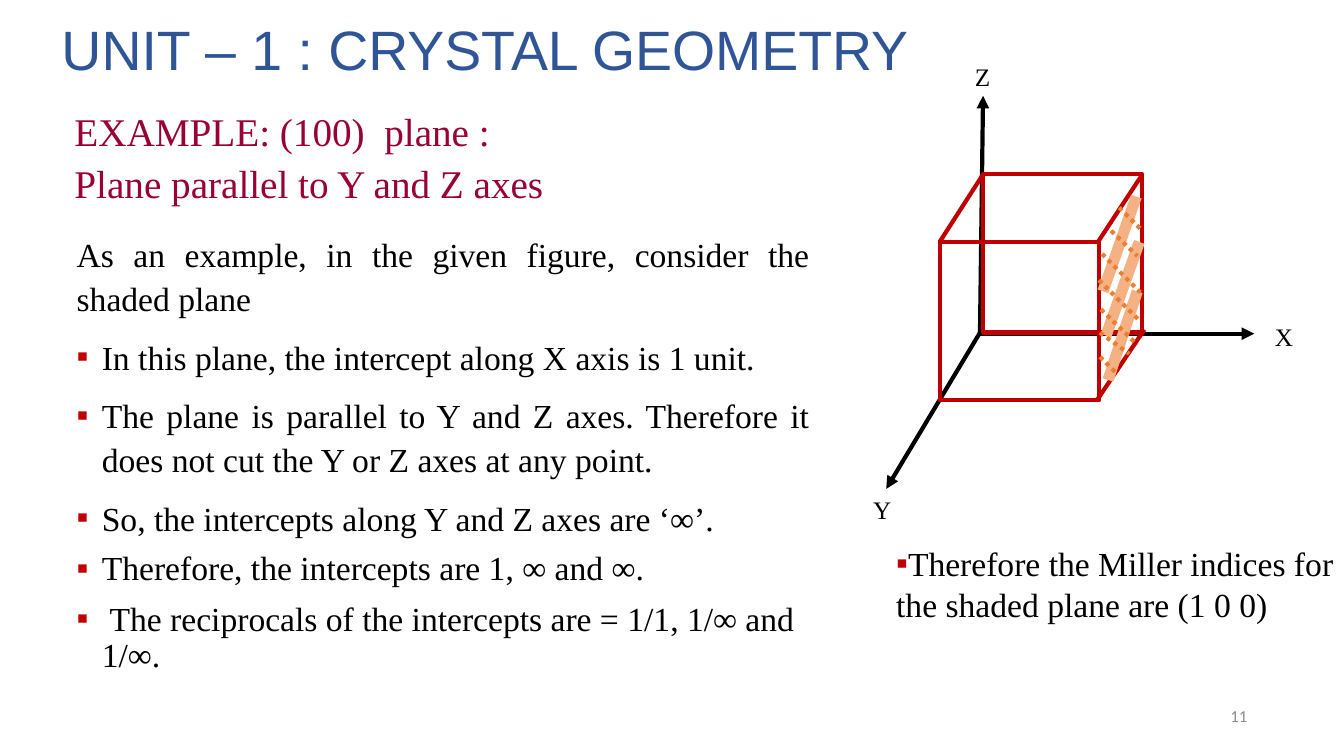
from dataclasses import dataclass

from lxml import etree
from pptx import Presentation
from pptx import util as u
from pptx.dml.color import RGBColor
from pptx.enum import dml, shapes, text
from pptx.oxml import ns


@dataclass(frozen=True)
class Theme:
    title: str = "2F5597"
    heading: str = "990033"
    ink: str = "000000"
    cube: str = "C00000"
    band: str = "F4B183"
    dots: str = "ED7D31"
    muted: str = "8C8C8C"
    title_font: str = "Arial"
    body_font: str = "Times New Roman"
    number_font: str = "Calibri"
    title_size: float = 39.6
    heading_size: float = 28
    body_size: float = 24
    label_size: float = 18
    number_size: float = 12
    line_width: float = 3
    band_width: float = 8


THEME = Theme()
ALIGN = text.PP_ALIGN

INTRO = "As an example, in the given figure, consider the shaded plane"
JUSTIFIED_POINTS = [
    "In this plane, the intercept along X axis is 1 unit. ",
    "The plane is parallel to Y and Z axes. Therefore it does not cut the Y or Z axes at any point.",
    "So, the intercepts along Y and Z axes are ‘∞’.",
]
LEFT_POINTS = [
    "Therefore, the intercepts are 1, ∞ and ∞.",
    " The reciprocals of the intercepts are = 1/1, 1/∞ and 1/∞.",
]

AXES = [((1.14, 2.75), (3.88, 2.75)), ((1.16, 2.74), (1.19, 0.39)), ((1.16, 2.74), (0.23, 4.29))]
FACES = [(0.76, 1.84), (1.19, 1.17)]
EDGES = [((2.32, 3.41), (2.79, 2.71)), ((0.76, 1.84), (1.19, 1.17)), ((2.33, 1.84), (2.77, 1.17))]
BANDS = [((2.71, 1.39), (2.38, 2.33)), ((2.74, 1.84), (2.41, 2.77)), ((2.72, 2.33), (2.43, 3.21))]
DOTS = [
    ((2.54, 1.5), (2.77, 1.73)), ((2.46, 1.73), (2.72, 1.98)), ((2.37, 1.96), (2.75, 2.34)),
    ((2.34, 2.22), (2.74, 2.62)), ((2.36, 2.51), (2.72, 2.86)), ((2.35, 2.74), (2.64, 2.95)),
    ((2.35, 2.98), (2.5, 3.13)),
]
LABELS = [("Z", 0.92, 0, 0.53), ("X", 3.91, 2.58, 0.53), ("Y", 0, 4.29, 0.38)]


def place(sp, box):
    sp.left, sp.top, sp.width, sp.height = map(u.Inches, box)


def add_text_box(s, box):
    tf = s.shapes.add_textbox(*map(u.Inches, box)).text_frame
    tf.word_wrap = True
    return tf


def style(p, size, color, font=THEME.body_font, align=ALIGN.LEFT, spacing=1.0, before=0):
    p.alignment = align
    p.line_spacing = spacing
    p.space_before = u.Pt(before)
    for r in p.runs:
        r.font.size = u.Pt(size)
        r.font.name = font
        r.font.color.rgb = RGBColor.from_string(color)


def set_bullet(p, char, indent=0):
    pPr = p._p.get_or_add_pPr()
    pPr.set("marL", str(u.Inches(indent)))
    pPr.set("indent", str(-u.Inches(indent)))
    if not char:
        etree.SubElement(pPr, ns.qn("a:buNone"))
        return
    color = etree.SubElement(pPr, ns.qn("a:buClr"))
    etree.SubElement(color, ns.qn("a:srgbClr"), val=THEME.cube)
    etree.SubElement(pPr, ns.qn("a:buFont"), typeface=THEME.body_font)
    etree.SubElement(pPr, ns.qn("a:buChar"), char=char)


def add_line(s, box, ends, color, width=THEME.line_width, dash=None, arrow=False):
    left, top = box[:2]
    (x1, y1), (x2, y2) = ends
    points = (left + x1, top + y1, left + x2, top + y2)
    line = s.shapes.add_connector(shapes.MSO_CONNECTOR.STRAIGHT, *map(u.Inches, points))
    line.line.color.rgb = RGBColor.from_string(color)
    line.line.width = u.Pt(width)
    if dash is not None:
        line.line.dash_style = dash
    if arrow:
        etree.SubElement(line.line._get_or_add_ln(), ns.qn("a:tailEnd"), type="triangle")
    etree.SubElement(line._element.spPr, ns.qn("a:effectLst"))


def add_title(s, box):
    sp = s.shapes.title
    place(sp, box)
    tf = sp.text_frame
    tf.text = "UNIT – 1 : CRYSTAL GEOMETRY"
    tf.auto_size = text.MSO_AUTO_SIZE.NONE
    tf.vertical_anchor = text.MSO_ANCHOR.MIDDLE
    style(tf.paragraphs[0], THEME.title_size, THEME.title, THEME.title_font, spacing=0.9)


def add_heading(s, box):
    tf = add_text_box(s, box)
    tf.text = "EXAMPLE: (100)  plane : \nPlane parallel to Y and Z axes"
    for p in tf.paragraphs:
        style(p, THEME.heading_size, THEME.heading, align=ALIGN.JUSTIFY, spacing=1.1)


def add_explanation(s, box):
    sp = s.placeholders[1]
    place(sp, box)
    tf = sp.text_frame
    tf.text = "\n".join([INTRO, *JUSTIFIED_POINTS, *LEFT_POINTS])
    tf.auto_size = text.MSO_AUTO_SIZE.NONE
    for i, p in enumerate(tf.paragraphs):
        justified = i <= len(JUSTIFIED_POINTS)
        style(p, THEME.body_size, THEME.ink, align=ALIGN.JUSTIFY if justified else ALIGN.LEFT,
              spacing=1.1 if justified else 0.9, before=10)
        set_bullet(p, "▪" if i else None, 0.25 if i else 0)


def add_crystal(s, box):
    left, top = box[:2]
    for ends in AXES:
        add_line(s, box, ends, THEME.ink, arrow=True)
    for x, y in FACES:
        face = s.shapes.add_shape(shapes.MSO_SHAPE.RECTANGLE,
                                  *map(u.Inches, (left + x, top + y, 1.58, 1.57)))
        face.shadow.inherit = False
        face.fill.background()
        face.line.color.rgb = RGBColor.from_string(THEME.cube)
        face.line.width = u.Pt(THEME.line_width)
    for ends in EDGES:
        add_line(s, box, ends, THEME.cube)
    for ends in BANDS:
        add_line(s, box, ends, THEME.band, THEME.band_width)
    for ends in DOTS:
        add_line(s, box, ends, THEME.dots, dash=dml.MSO_LINE.ROUND_DOT)
    for name, x, y, width in LABELS:
        tf = add_text_box(s, (left + x, top + y, width, 0.4))
        tf.text = name
        style(tf.paragraphs[0], THEME.label_size, THEME.ink, align=ALIGN.CENTER)


def add_conclusion(s, box):
    tf = add_text_box(s, box)
    tf.text = "Therefore the Miller indices for the shaded plane are (1 0 0)"
    p = tf.paragraphs[0]
    style(p, THEME.body_size, THEME.ink)
    set_bullet(p, "▪")


def add_slide_number(s, box):
    tf = add_text_box(s, box)
    tf.text = "11"
    tf.vertical_anchor = text.MSO_ANCHOR.MIDDLE
    style(tf.paragraphs[0], THEME.number_size, THEME.muted, THEME.number_font, ALIGN.RIGHT)


def main():
    prs = Presentation()
    prs.slide_width, prs.slide_height = u.Inches(13.33), u.Inches(7.5)
    s = prs.slides.add_slide(prs.slide_layouts[1])
    add_explanation(s, (0.66, 2.23, 7.47, 4.51))
    add_title(s, (0.51, 0.18, 11.5, 0.68))
    add_heading(s, (0.64, 0.97, 5.16, 1.14))
    add_slide_number(s, (9.47, 6.9, 3, 0.4))
    add_crystal(s, (8.56, 0.56, 4.44, 4.69))
    add_conclusion(s, (8.79, 5.34, 4.54, 0.91))
    prs.save("out.pptx")


if __name__ == "__main__":
    main()
